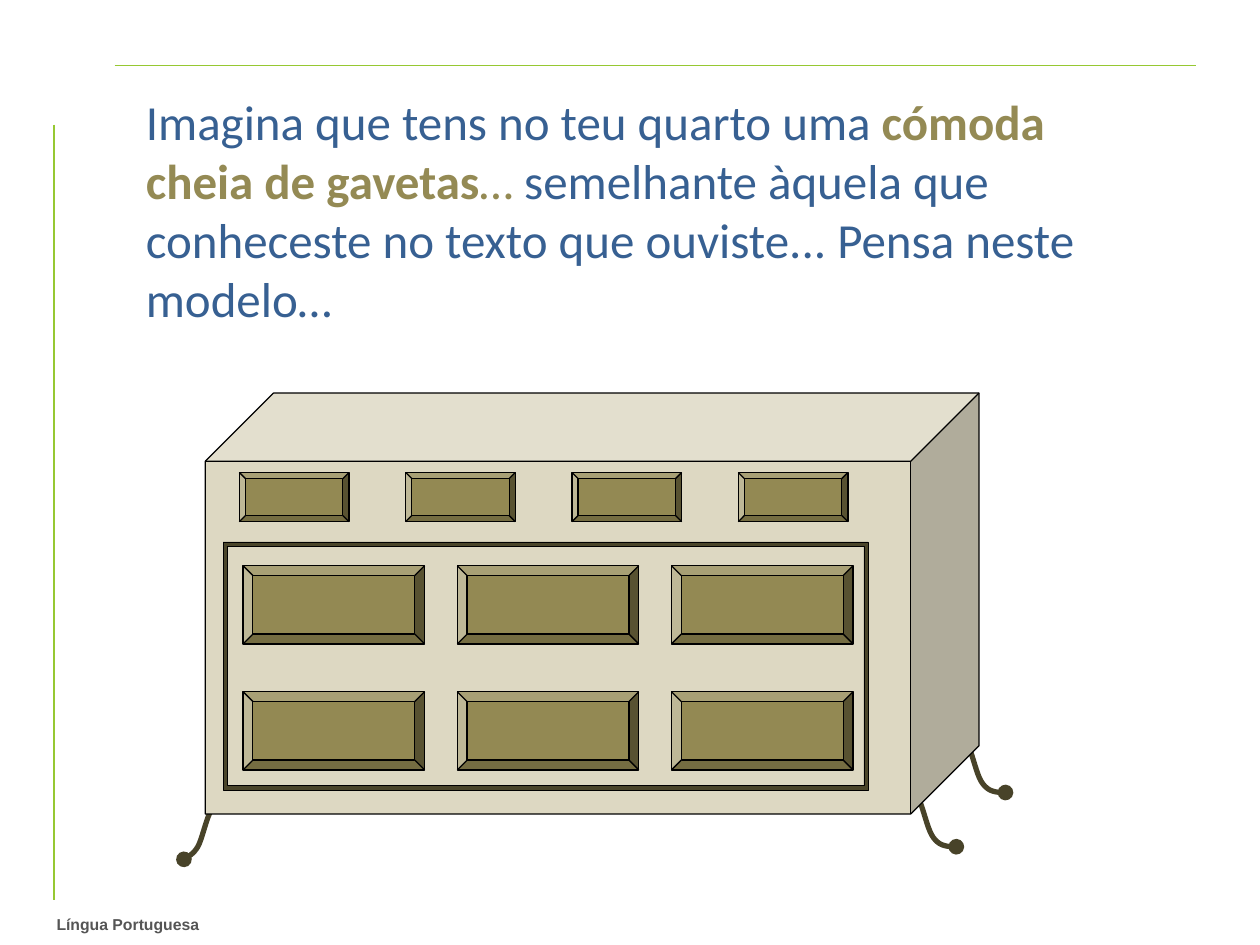
from lxml import etree
from pptx import Presentation
from pptx import util as u
from pptx.dml.color import RGBColor
from pptx.enum import shapes as sh
from pptx.oxml.ns import qn

Inches, Pt = u.Inches, u.Pt
Kind = sh.MSO_SHAPE
rgb = RGBColor.from_string

prs = Presentation()
prs.slide_width, prs.slide_height = Inches(10), Inches(7.5)
slide = prs.slides.add_slide(prs.slide_layouts[6])
items = slide.shapes


def part(kind, box, adj, fill, width=0.75):
    """Add a piece of the chest with a black outline."""
    piece = items.add_shape(kind, *map(Inches, box))
    piece.adjustments[0] = adj
    piece.shadow.inherit = False
    piece.fill.solid()
    piece.fill.fore_color.rgb = rgb(fill)
    piece.line.color.rgb = rgb("000000")
    piece.line.width = Pt(width)


def write(box, runs, font, size):
    """Add a wrapped text box; runs are (words, colour, bold)."""
    frame = items.add_textbox(*map(Inches, box)).text_frame
    frame.word_wrap = True
    for words, tint, bold in runs:
        run = frame.paragraphs[0].add_run()
        run.text = words
        run.font.name, run.font.size, run.font.bold = font, Pt(size), bold
        run.font.color.rgb = rgb(tint)


# Page rules
for ends in [(0.91, 0.52, 9.49, 0.52), (0.43, 0.99, 0.43, 7.14)]:
    rule = items.add_connector(sh.MSO_CONNECTOR.STRAIGHT, *map(Inches, ends))
    rule.line.color.rgb = rgb("96C832")
    rule.line.width = Pt(1)
    etree.SubElement(rule._element.spPr, qn("a:effectLst"))

# Text
blue, olive = "376092", "948A54"
write((0.35, 7.21, 5.68, 0.25), [("Língua Portuguesa", "555555", True)], "Arial", 9)
write((1.06, 0.68, 8.03, 2.29), [
    ("Imagina que tens no teu quarto uma ", blue, False),
    ("cómoda cheia de gavetas", olive, True),
    ("…", olive, False),
    (" semelhante àquela que conheceste no texto que ouviste... "
     "Pensa neste modelo…", blue, False),
], "Calibri", 28)

# Legs: one curve of three Bézier pieces, sampled; the left leg is upside down
high = 0.48
knots = [(0.41, 0.48), (0.35, 0.48), (0.28, 0.48), (0.23, 0.41), (0.18, 0.35),
         (0.15, 0.17), (0.11, 0.1), (0.07, 0.03), (0.01, 0.01), (0, 0)]
steps = 10
curve = [knots[0]]
for k in (0, 3, 6):
    for n in range(1, steps + 1):
        t = n / steps
        mix = ((1 - t) ** 3, 3 * t * (1 - t) ** 2, 3 * t * t * (1 - t), t ** 3)
        curve.append(tuple(sum(m * p[axis] for m, p in zip(mix, knots[k:k + 4]))
                           for axis in (0, 1)))

for left, top, flip in [(7.18, 6.24, False), (7.57, 5.81, False), (1.46, 6.34, True)]:
    dots = [(Inches(left + x), Inches(top + (high - y if flip else y)))
            for x, y in curve]
    pen = items.build_freeform(*dots[0])
    pen.add_line_segments(dots[1:], close=False)
    leg = pen.convert_to_shape()
    leg.shadow.inherit = False
    leg.fill.background()
    leg.line.color.rgb = rgb("484329")
    leg.line.width = Pt(3)
    stroke = leg.line._get_or_add_ln()
    etree.SubElement(stroke, qn("a:round"))
    for end in ("a:headEnd", "a:tailEnd"):
        etree.SubElement(stroke, qn(end), type="oval")

# Chest, large drawers, small drawers, frame
wood = "938953"
part(Kind.CUBE, (1.63, 3.12, 6.14, 3.34), 0.162, "DDD8C2")
for row in range(2):
    for col in range(3):
        part(Kind.BEVEL, (1.93 + 1.7 * col, 4.49 + row, 1.44, 0.62), 0.125, wood)
for col in range(4):
    part(Kind.BEVEL, (1.9 + 1.32 * col, 3.75, 0.87, 0.39), 0.125, wood)
part(Kind.FRAME, (1.77, 4.3, 5.12, 1.97), 0.017, "4A452A", 0.25)

prs.save("out.pptx")
